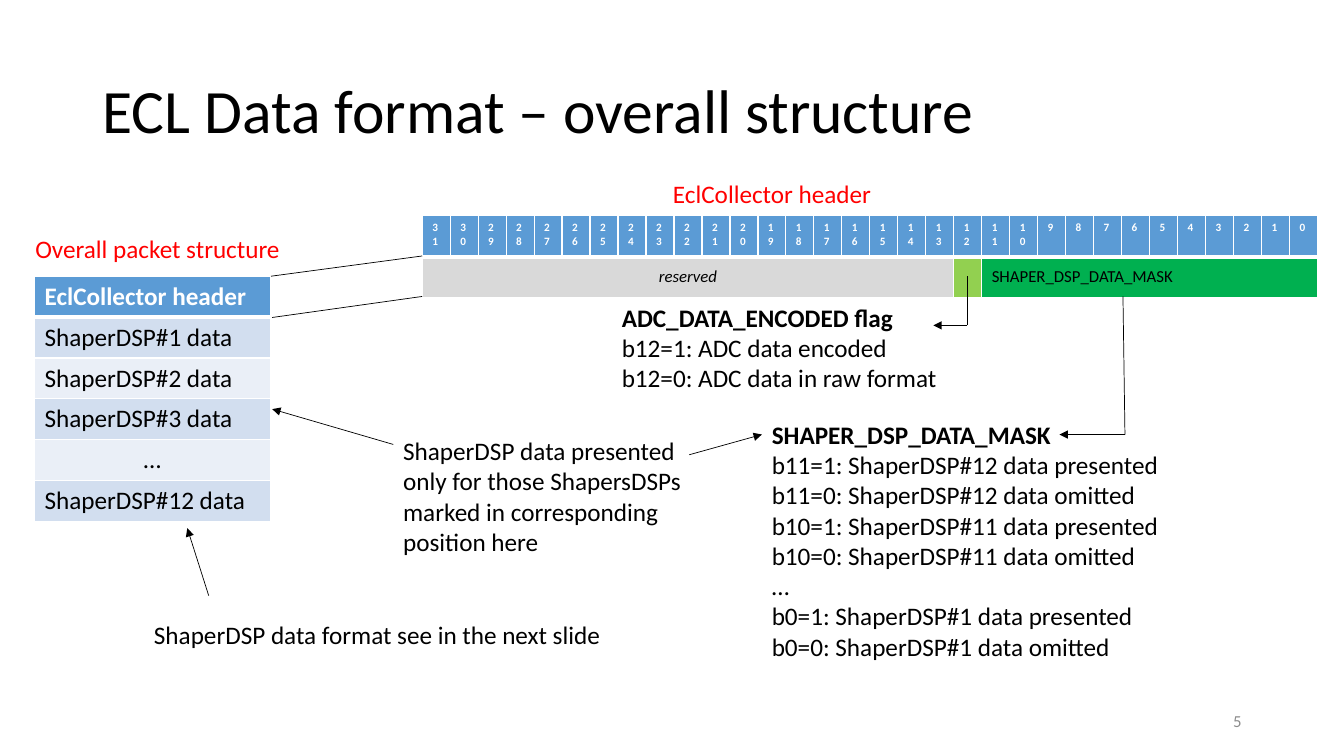
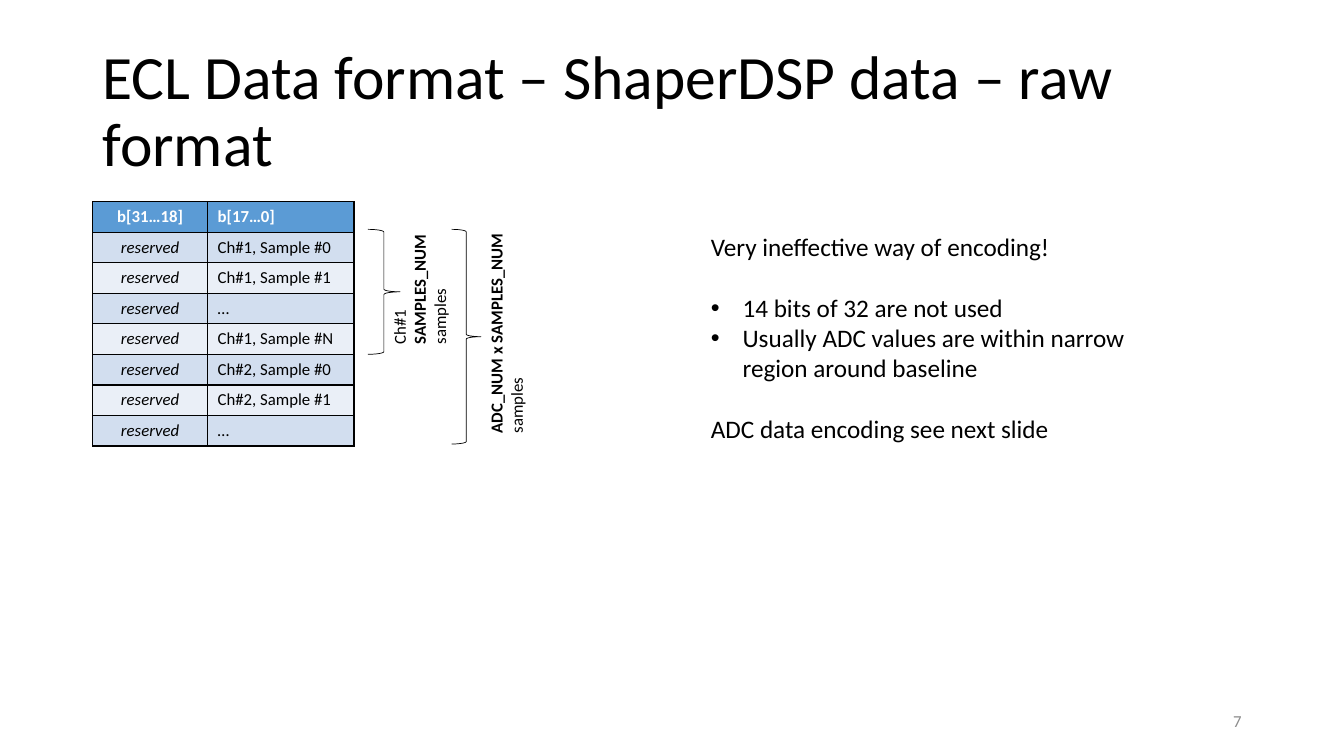
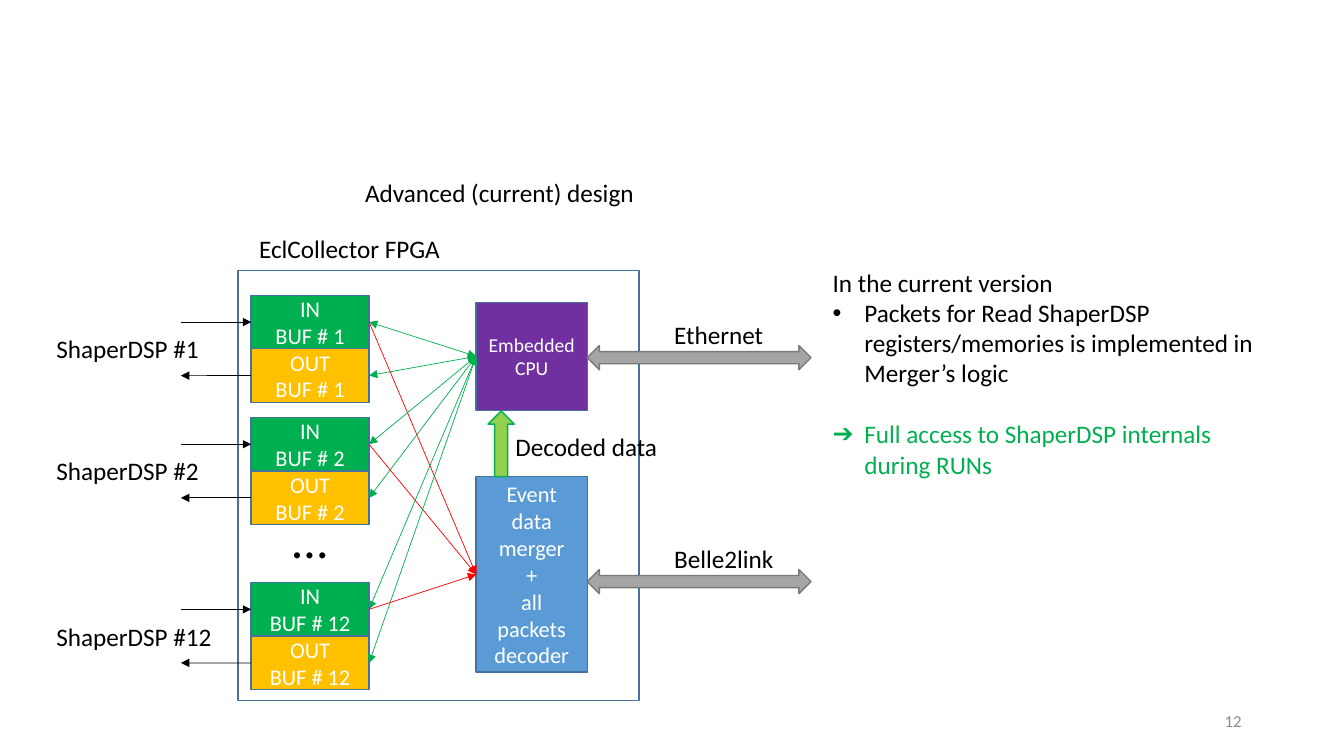
from lxml.etree import SubElement
from pptx import Presentation
from pptx.dml.color import RGBColor
from pptx.enum.shapes import MSO_CONNECTOR, MSO_SHAPE
from pptx.enum.text import MSO_ANCHOR, MSO_AUTO_SIZE, PP_ALIGN
from pptx.oxml.ns import qn
from pptx.util import Cm, Pt

FONT = "Calibri"
COLORS = {
    "black": "000000", "white": "FFFFFF", "red": "FF0000", "footer": "8C8C8C",
    "blue": "5B9BD5", "outline": "43739E", "band": "D2DEEF", "pale": "EAEFF7",
    "green": "00B050", "lime": "92D050", "amber": "FFC000", "purple": "7030A0",
    "reserved": "D9D9D9", "link": "A5A5A5", "link_line": "7A7A7A",
}


def rgb(name):
    return RGBColor.from_string(COLORS[name])


# Text
def style(para, size, color="black", bold=False, italic=False, align=PP_ALIGN.LEFT):
    para.alignment = align
    font = para.font
    font.name, font.size, font.bold, font.italic = FONT, Pt(size), bold, italic
    font.color.rgb = rgb(color)


def write(frame, text, size, bold_line=None, **look):
    frame.text = text
    for index, para in enumerate(frame.paragraphs):
        style(para, size, **{"bold": index == bold_line, **look})


def add_label(page, left, top, width, height, text, size=18, wrap=False, **look):
    label = page.shapes.add_textbox(Cm(left), Cm(top), Cm(width), Cm(height))
    label.text_frame.word_wrap = wrap
    write(label.text_frame, text, size, **look)
    return label


def turn_text(label):
    label.element.find(".//" + qn("a:bodyPr")).set("vert", "vert270")


def place(shape, left, top, width, height):
    shape.left, shape.top = Cm(left), Cm(top)
    shape.width, shape.height = Cm(width), Cm(height)


def fill_list(page, left, top, width, height, items):
    """Each item is text, bullet, space before in points, colour."""
    body = page.placeholders[1]
    place(body, left, top, width, height)
    frame = body.text_frame
    frame.auto_size = MSO_AUTO_SIZE.NONE
    frame.text = "\n".join(item[0] for item in items)
    for para, (_, bullet, gap, color) in zip(frame.paragraphs, items):
        para.space_before = Pt(gap)
        properties = para._p.get_or_add_pPr()
        indent = Cm(0.8) if bullet else 0
        properties.set("marL", str(indent))
        properties.set("indent", str(-indent))
        if bullet:
            SubElement(properties, qn("a:buFont")).set("typeface", "Arial")
            SubElement(properties, qn("a:buChar")).set("char", bullet)
        else:
            SubElement(properties, qn("a:buNone"))
        style(para, 18, color)


# Shapes and lines
def add_block(page, kind, left, top, width, height, fill=None, line="outline",
              weight=1, text="", size=16):
    block = page.shapes.add_shape(kind, Cm(left), Cm(top), Cm(width), Cm(height))
    block.shadow.inherit = False
    if fill:
        block.fill.solid()
        block.fill.fore_color.rgb = rgb(fill)
    else:
        block.fill.background()
    block.line.color.rgb = rgb(line)
    block.line.width = Pt(weight)
    if text:
        block.text_frame.vertical_anchor = MSO_ANCHOR.MIDDLE
        write(block.text_frame, text, size, color="white", align=PP_ALIGN.CENTER)
    return block


def add_line(page, start, end, color="black", ends=("tailEnd",)):
    """An end is a point in cm, or a shape with the number of its side."""
    points = [(0, 0) if hasattr(spot[0], "shape_id") else spot for spot in (start, end)]
    line = page.shapes.add_connector(
        MSO_CONNECTOR.STRAIGHT, *(Cm(value) for point in points for value in point))
    if hasattr(start[0], "shape_id"):
        line.begin_connect(*start)
    if hasattr(end[0], "shape_id"):
        line.end_connect(*end)
    line.line.color.rgb = rgb(color)
    line.line.width = Pt(0.5)
    properties = line.element.spPr
    for name in ends:
        SubElement(properties.find(qn("a:ln")), qn("a:" + name)).set("type", "triangle")
    SubElement(properties, qn("a:effectLst"))


# Tables
def paint_cell(cell, fill, border="white", bottom=1):
    properties = cell._tc.get_or_add_tcPr()
    for side, weight in (("L", 1), ("R", 1), ("T", 1), ("B", bottom)):
        edge = SubElement(properties, qn("a:ln" + side))
        edge.set("w", str(Pt(weight)))
        solid = SubElement(edge, qn("a:solidFill"))
        SubElement(solid, qn("a:srgbClr")).set("val", COLORS[border])
    cell.fill.solid()
    cell.fill.fore_color.rgb = rgb(fill)


def add_grid(page, left, top, widths, row_count, row_height):
    table = page.shapes.add_table(
        row_count, len(widths), Cm(left), Cm(top),
        Cm(sum(widths)), Cm(row_count * row_height)).table
    for column, width in zip(table.columns, widths):
        column.width = Cm(width)
    for row in table.rows:
        row.height = Cm(row_height)
    return table


def row_fill(row):
    return "blue" if row == 0 else ("pale", "band")[row % 2]


# Title and page number
def new_page(deck, number, title=None, layout="Title and Content"):
    page = deck.slides.add_slide(deck.slide_layouts.get_by_name(layout))
    heading = page.shapes.title
    if title:
        place(heading, 2.33, 1.01, 29.21, 3.68)
        frame = heading.text_frame
        frame.auto_size = MSO_AUTO_SIZE.NONE
        frame.vertical_anchor = MSO_ANCHOR.MIDDLE
        write(frame, title, 44)
        frame.paragraphs[0].line_spacing = 0.9
    else:
        heading.element.getparent().remove(heading.element)
    footer = add_label(page, 23.92, 17.66, 7.62, 1.01, str(number), 12, wrap=True,
                       color="footer", align=PP_ALIGN.RIGHT)
    footer.text_frame.vertical_anchor = MSO_ANCHOR.MIDDLE
    return page


# Overall structure
def packet_table(page, left, top):
    add_label(page, left - 0.23, top - 1.2, 6.73, 1.02, "Overall packet structure",
              color="red")
    rows = ["EclCollector header", "ShaperDSP#1 data", "ShaperDSP#2 data",
            "ShaperDSP#3 data", "…", "ShaperDSP#12 data"]
    table = add_grid(page, left, top, [5.94], len(rows), 1.03)
    for index, text in enumerate(rows):
        cell, header = table.cell(index, 0), index == 0
        paint_cell(cell, row_fill(index), bottom=3 if header else 1)
        write(cell.text_frame, text, 18, bold=header,
              color="white" if header else "black",
              align=PP_ALIGN.CENTER if text == "…" else PP_ALIGN.LEFT)


def header_register(page, left, top):
    add_label(page, left + 6.07, top - 1.07, 5.56, 1.02, "EclCollector header",
              color="red")
    bits = 32
    table = add_grid(page, left, top, [22.58 / bits] * bits, 2, 1.03)
    for column in range(bits):
        cell = table.cell(0, column)
        paint_cell(cell, "blue", bottom=3)
        write(cell.text_frame, str(bits - 1 - column), 8, color="white", bold=True)
    fields = [  # first column, last column, text, fill, look
        (0, 18, "reserved", "reserved", {"italic": True, "align": PP_ALIGN.CENTER}),
        (19, 19, "", "lime", {}),
        (20, 31, "SHAPER_DSP_DATA_MASK", "green", {}),
    ]
    for first, last, text, fill, look in fields:
        cell = table.cell(1, first)
        if last > first:
            cell.merge(table.cell(1, last))
        paint_cell(cell, fill)
        cell.vertical_anchor = MSO_ANCHOR.MIDDLE
        write(cell.text_frame, text, 12, **look)

    # Meaning of the fields
    add_label(page, left + 4.78, top + 2.05, 8.53, 2.57,
              "ADC_DATA_ENCODED flag\nb12=1: ADC data encoded\n"
              "b12=0: ADC data in raw format", bold_line=0)
    mask_lines = ["SHAPER_DSP_DATA_MASK"]
    for bit in (11, 10, None, 0):
        if bit is None:
            mask_lines.append("…")
        else:
            mask_lines += [f"b{bit}={value}: ShaperDSP#{bit + 1} data {state}"
                           for value, state in ((1, "presented"), (0, "omitted"))]
    add_label(page, left + 8.56, top + 5, 10.36, 6.4, "\n".join(mask_lines), bold_line=0)
    for start, corner, end in (((13.74, 1.52), (13.74, 2.76), (12.88, 2.76)),
                               ((17.66, 2.03), (17.71, 5.51), (16.06, 5.51))):
        start, corner, end = ((left + x, top + y) for x, y in (start, corner, end))
        add_line(page, start, corner, ends=())
        add_line(page, corner, end)


def structure_notes(page, left, top):
    add_label(page, left, top, 7.75, 3.33,
              "ShaperDSP data presented\nonly for those ShapersDSPs\n"
              "marked in corresponding\nposition here")
    add_line(page, (left, top + 0.35), (left - 3.05, top - 0.54))
    add_line(page, (left + 7.46, top + 0.61), (left + 9.29, top + 0.1))
    add_label(page, left - 6.28, top + 4.64, 11.89, 1.02,
              "ShaperDSP data format see in the next slide")
    add_line(page, (left - 4.65, top + 4.16), (left - 5.19, top + 2.46))


def structure_page(deck):
    page = new_page(deck, 5, "ECL Data format – overall structure", "Title Only")
    packet_table(page, 0.87, 6.96)
    header_register(page, 10.64, 5.44)
    add_line(page, (6.83, 6.96), (10.64, 6.45), ends=())
    add_line(page, (6.86, 8), (10.64, 7.47), ends=())
    structure_notes(page, 9.91, 10.85)


# Raw format
def sample_table(page, left, top):
    samples = ["Ch#1, Sample #0", "Ch#1, Sample #1", "…", "Ch#1, Sample #N",
               "Ch#2, Sample #0", "Ch#2, Sample #1", "…"]
    rows = [("b[31…18]", "b[17…0]")] + [("reserved", sample) for sample in samples]
    table = add_grid(page, left, top, [2.89, 3.69], len(rows), 0.77)
    for row, texts in enumerate(rows):
        header = row == 0
        for column, text in enumerate(texts):
            cell = table.cell(row, column)
            paint_cell(cell, row_fill(row), border="black")
            write(cell.text_frame, text, 12, color="white" if header else "black",
                  bold=header, italic=text == "reserved",
                  align=PP_ALIGN.LEFT if column else PP_ALIGN.CENTER)


def sample_braces(page, left, top):
    for offset, width, height in ((0, 0.81, 3.15), (2.11, 0.74, 5.41)):
        add_block(page, MSO_SHAPE.RIGHT_BRACE, left + offset, top, width, height,
                  line="black", weight=0.5)
    turn_text(add_label(page, left + 0.41, top, 2.06, 3.15,
                        "Ch#1\nSAMPLES_NUM\nsamples", 12, bold_line=1))
    turn_text(add_label(page, left + 2.85, top - 0.25, 1.55, 5.64,
                        "ADC_NUM x SAMPLES_NUM\nsamples", 12, wrap=True, bold_line=0))


def raw_format_page(deck):
    page = new_page(deck, 7, "ECL Data format – ShaperDSP data – raw format")
    sample_table(page, 2.34, 5.08)
    sample_braces(page, 9.27, 5.78)
    fill_list(page, 17.66, 5.7, 11.99, 6.4, [
        ("Very ineffective way of encoding!", None, 0, "black"),
        ("14 bits of 32 are not used", "•", 22, "black"),
        ("Usually ADC values are within narrow region around baseline", "•", 0, "black"),
        ("ADC data encoding see next slide", None, 22, "black"),
    ])


# Current design
def channel(page, left, top, number):
    width, height = 2.97, 1.35
    buffer_in, buffer_out = (
        add_block(page, MSO_SHAPE.RECTANGLE, left, top + row * height, width, height,
                  fill, text=f"{name}\nBUF # {number}")
        for row, (name, fill) in enumerate((("IN", "green"), ("OUT", "amber"))))
    outside = left - 1.77
    add_line(page, (outside, top + height / 2), (buffer_in, 1))
    add_line(page, (buffer_out, 1), (outside, top + height * 1.5))
    add_label(page, left - 5.16, top + 0.84, 4.47, 1.02, f"ShaperDSP #{number}")
    return buffer_in, buffer_out


def external_link(page, left, top, name):
    add_block(page, MSO_SHAPE.LEFT_RIGHT_ARROW, left, top, 5.64, 0.61, "link", "link_line")
    add_label(page, left + 1.94, top - 0.79, 3.6, 1.02, name)


def fpga_diagram(page, left, top, width, height):
    add_label(page, left + 0.28, top - 1.05, 5.1, 1.02, "EclCollector FPGA")
    add_block(page, MSO_SHAPE.RECTANGLE, left, top, width, height)
    channels = [channel(page, left + 0.33, top + offset, number)
                for number, offset in ((1, 0.63), (2, 3.71), (12, 7.87))]
    add_label(page, left + 1.12, top + 5.86, 1.4, 1.8, "…", 36)
    cpu = add_block(page, MSO_SHAPE.RECTANGLE, left + 6, top + 0.81, 2.8, 2.72,
                    "purple", text="Embedded\nCPU", size=14)
    merger = add_block(page, MSO_SHAPE.RECTANGLE, left + 6, top + 5.2, 2.8, 4.93,
                       "blue", text="Event data merger\n+\nall packets decoder")
    for buffers in channels:
        for buffer in buffers:
            add_line(page, (cpu, 1), (buffer, 3), "green", ("headEnd", "tailEnd"))
        add_line(page, (buffers[0], 3), (merger, 1), "red")
    add_block(page, MSO_SHAPE.UP_ARROW, left + 6.3, top + 3.55, 0.66, 1.65, "lime", "green")
    add_label(page, left + 6.74, top + 3.93, 4.14, 1.02, "Decoded data")
    external_link(page, left + 8.8, top + 1.9, "Ethernet")
    external_link(page, left + 8.8, top + 7.54, "Belle2link")


def design_page(deck):
    page = new_page(deck, 12)
    add_label(page, 8.95, 4.34, 7.37, 1.02, "Advanced (current) design")
    fpga_diagram(page, 6, 6.81, 10.11, 10.85)
    fill_list(page, 20.73, 6.6, 11.3, 5.64, [
        ("In the current version", None, 0, "black"),
        ("Packets for Read ShaperDSP registers/memories is implemented in "
         "Merger’s logic", "•", 0, "black"),
        ("Full access to ShaperDSP internals during RUNs", "➔", 22, "green"),
    ])


def main():
    deck = Presentation()
    deck.slide_width, deck.slide_height = Cm(33.87), Cm(19.05)
    structure_page(deck)
    raw_format_page(deck)
    design_page(deck)
    deck.save("out.pptx")


if __name__ == "__main__":
    main()
